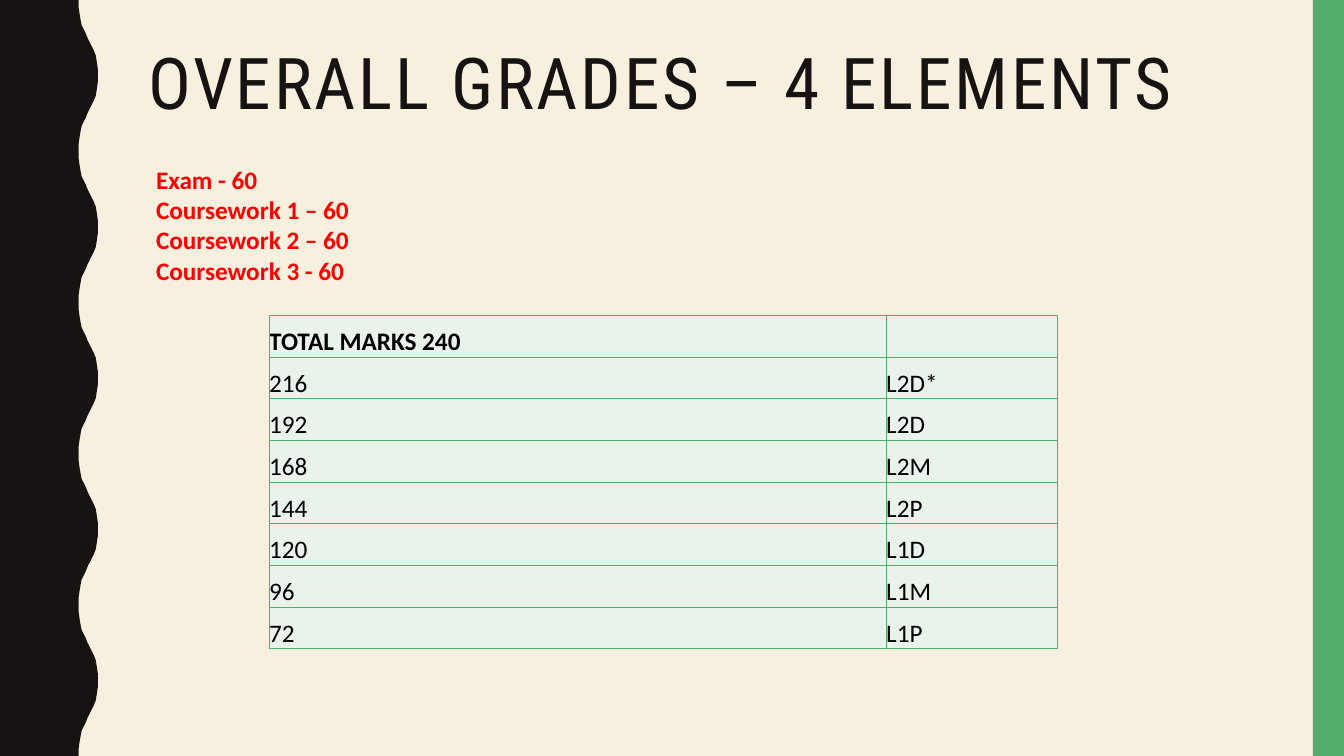
"""Build the overall grades slide with its mark boundaries table."""
import lxml.etree
import pptx
import pptx.dml.color
import pptx.enum.shapes
import pptx.enum.text
import pptx.oxml.ns
import pptx.util

Inches = pptx.util.Inches

TITLE = "OVERALL GRADES – 4 ELEMENTS"
ELEMENTS = ["Exam - 60", "Coursework 1 – 60", "Coursework 2 – 60", "Coursework 3 - 60"]
GRADES = [
    ("TOTAL MARKS 240", ""),
    ("216", "L2D*"),
    ("192", "L2D"),
    ("168", "L2M"),
    ("144", "L2P"),
    ("120", "L1D"),
    ("96", "L1M"),
    ("72", "L1P"),
]
COLUMN_WIDTHS = (6.12, 1.7)
TABLE_HEIGHT = 3.31
WIDTH, HEIGHT = 13.33, 7.5
CREAM, DARK, GREEN, PALE_GREEN = "F7F0DF", "171312", "53AE6E", "E9F2EB"
BLACK, RED = "000000", "FF0000"
WAVE_PERIOD = 1.5
HALF_WAVE = [
    (0.78, 0), (0.78, 0.07), (0.79, 0.14), (0.8, 0.2), (0.81, 0.25),
    (0.83, 0.29), (0.85, 0.33), (0.87, 0.38), (0.89, 0.42), (0.91, 0.46),
    (0.93, 0.5), (0.95, 0.55), (0.96, 0.61), (0.97, 0.68), (0.97, 0.75),
]


def paint(color_fill, color):
    color_fill.solid()
    color_fill.fore_color.rgb = pptx.dml.color.RGBColor.from_string(color)


def finish(shape, color):
    paint(shape.fill, color)
    shape.line.fill.background()
    shape.shadow.inherit = False


def format_runs(paragraph, font_name, size, color, bold=False):
    for run in paragraph.runs:
        run.font.name = font_name
        run.font.size = pptx.util.Pt(size)
        run.font.bold = bold
        paint(run.font.fill, color)


def add_background(slide):
    paint(slide.background.fill, CREAM)
    wave = HALF_WAVE + [(x, WAVE_PERIOD - y) for x, y in HALF_WAVE[-2:0:-1]]
    edge = [(x, y + period * WAVE_PERIOD)
            for period in range(round(HEIGHT / WAVE_PERIOD)) for x, y in wave]
    outline = edge + [(HALF_WAVE[0][0], HEIGHT), (0, HEIGHT)]
    builder = slide.shapes.build_freeform(0, 0)
    builder.add_line_segments([(Inches(x), Inches(y)) for x, y in outline], close=True)
    finish(builder.convert_to_shape(), DARK)
    stripe = slide.shapes.add_shape(
        pptx.enum.shapes.MSO_SHAPE.RECTANGLE,
        Inches(13.02), 0, Inches(WIDTH - 13.02), Inches(HEIGHT))
    finish(stripe, GREEN)


def add_title(slide):
    title = slide.shapes.title
    title.left, title.top = Inches(1.37), Inches(0.42)
    title.width, title.height = Inches(11.13), Inches(1.63)
    frame = title.text_frame
    frame.text = TITLE
    frame.auto_size = pptx.enum.text.MSO_AUTO_SIZE.NONE
    frame.vertical_anchor = pptx.enum.text.MSO_ANCHOR.TOP
    paragraph = frame.paragraphs[0]
    paragraph.alignment = pptx.enum.text.PP_ALIGN.LEFT
    paragraph.line_spacing = 0.9
    format_runs(paragraph, "Roboto Condensed", 51, DARK)
    paragraph.runs[0].font._element.set("spc", "200")


def add_borders(cell):
    properties = cell._tc.get_or_add_tcPr()
    for side in ("L", "R", "T", "B"):
        line = lxml.etree.SubElement(
            properties, pptx.oxml.ns.qn(f"a:ln{side}"), w=str(pptx.util.Pt(1)))
        fill = lxml.etree.SubElement(line, pptx.oxml.ns.qn("a:solidFill"))
        lxml.etree.SubElement(fill, pptx.oxml.ns.qn("a:srgbClr"), val=GREEN)


def add_grades(slide):
    table = slide.shapes.add_table(
        len(GRADES), len(COLUMN_WIDTHS), Inches(2.67), Inches(3.13),
        Inches(sum(COLUMN_WIDTHS)), Inches(TABLE_HEIGHT)).table
    for column, width in zip(table.columns, COLUMN_WIDTHS):
        column.width = Inches(width)
    for row_index, row in enumerate(GRADES):
        for column_index, text in enumerate(row):
            cell = table.cell(row_index, column_index)
            cell.text = text
            cell.margin_left = cell.margin_right = cell.margin_top = cell.margin_bottom = 0
            cell.vertical_anchor = pptx.enum.text.MSO_ANCHOR.BOTTOM
            add_borders(cell)
            paint(cell.fill, PALE_GREEN)
            format_runs(cell.text_frame.paragraphs[0], "Calibri", 18, BLACK, row_index == 0)


def add_elements(slide):
    box = slide.shapes.add_textbox(Inches(1.45), Inches(1.58), Inches(9.26), Inches(1.31))
    frame = box.text_frame
    frame.word_wrap = True
    frame.auto_size = pptx.enum.text.MSO_AUTO_SIZE.SHAPE_TO_FIT_TEXT
    frame.text = "\n".join(ELEMENTS)
    for paragraph in frame.paragraphs:
        format_runs(paragraph, "Calibri", 18, RED, True)


def main():
    presentation = pptx.Presentation()
    presentation.slide_width = Inches(WIDTH)
    presentation.slide_height = Inches(HEIGHT)
    slide = presentation.slides.add_slide(presentation.slide_layouts[5])
    add_background(slide)
    add_title(slide)
    add_grades(slide)
    add_elements(slide)
    presentation.save("out.pptx")


if __name__ == "__main__":
    main()
